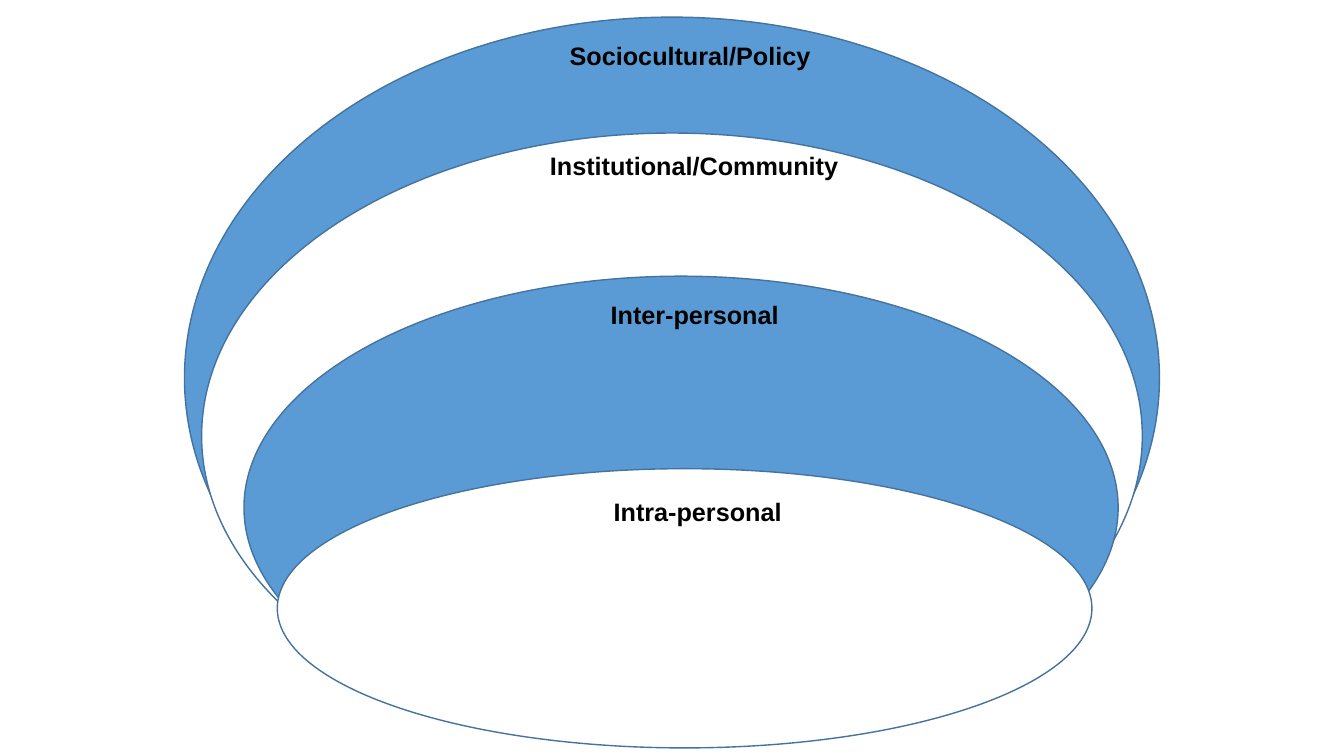
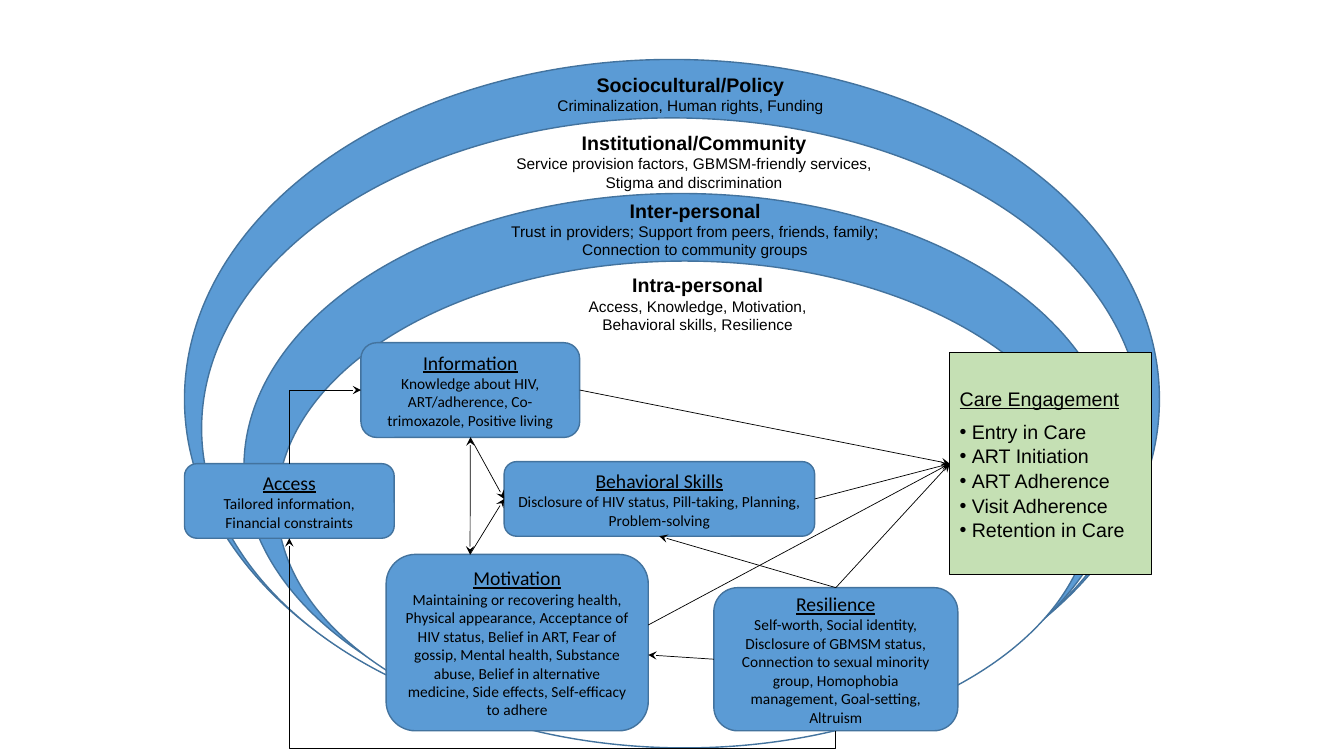
from dataclasses import dataclass

from lxml import etree
from pptx import Presentation
from pptx import util as u
from pptx.dml.color import RGBColor
from pptx.enum import shapes, text
from pptx.oxml import ns

BLUE, OUTLINE, GREEN = "5B9BD5", "43739E", "C5E0B4"
BLACK, WHITE = "000000", "FFFFFF"
OVAL_FILLS = (BLUE, WHITE, BLUE, WHITE)
Point = tuple[float, float]


@dataclass(frozen=True)
class Box:
    left: float
    top: float
    width: float
    height: float

    @property
    def lengths(self) -> list:
        return [u.Inches(n) for n in (self.left, self.top, self.width, self.height)]

    def at(self, across: float, down: float) -> Point:
        """Point at the given fractions of the width and height."""
        return self.left + across * self.width, self.top + down * self.height

    @property
    def west(self) -> Point:
        return self.at(0, 0.5)

    @property
    def east(self) -> Point:
        return self.at(1, 0.5)

    @property
    def north(self) -> Point:
        return self.at(0.5, 0)

    @property
    def south(self) -> Point:
        return self.at(0.5, 1)


@dataclass(frozen=True)
class Label:
    box: Box
    title: str
    details: tuple[str, ...] = ()


@dataclass(frozen=True)
class Arrow:
    start: Point
    end: Point
    both_ends: bool = False


LEVELS_OVALS = (
    Box(1.83, 0.17, 9.67, 7.16),
    Box(2, 1.32, 9.33, 6.01),
    Box(2.42, 2.74, 8.67, 4.59),
    Box(2.75, 4.65, 8.08, 2.77),
)
LEVELS_LABELS = (
    Label(Box(5.54, 0.35, 2.61, 0.4), "Sociocultural/Policy"),
    Label(Box(5.34, 1.44, 3.09, 0.4), "Institutional/Community"),
    Label(Box(5.95, 2.92, 1.88, 0.4), "Inter-personal"),
    Label(Box(5.98, 4.87, 1.88, 0.4), "Intra-personal"),
)
MODEL_OVALS = (
    Box(1.83, 0.59, 9.67, 6.74),
    Box(2, 1.17, 9.33, 6.16),
    Box(2.42, 1.92, 8.67, 5.42),
    Box(2.75, 2.59, 8.08, 4.83),
)
MODEL_LABELS = (
    Label(Box(5.4, 0.67, 2.9, 0.52), "Sociocultural/Policy",
          ("Criminalization, Human rights, Funding",)),
    Label(Box(4.99, 1.25, 3.79, 0.71), "Institutional/Community",
          ("Service provision factors, GBMSM-friendly services,",
           "Stigma and discrimination")),
    Label(Box(4.95, 1.92, 3.89, 0.71), "Inter-personal",
          ("Trust in providers; Support from peers, friends, family;",
           "Connection to community groups")),
    Label(Box(5.71, 2.66, 2.42, 0.71), "Intra-personal",
          ("Access, Knowledge, Motivation,", "Behavioral skills, Resilience")),
)
CARE = Label(Box(9.42, 3.5, 2, 2.2), "Care Engagement",
             ("Entry in Care", "ART Initiation", "ART Adherence",
              "Visit Adherence", "Retention in Care"))
SKILLS = Label(Box(5, 4.58, 3.08, 0.74), "Behavioral Skills",
               ("Disclosure of HIV status, Pill-taking, Planning, Problem-solving",))
INFORMATION = Label(Box(3.58, 3.4, 2.17, 0.94), "Information",
                    ("Knowledge about HIV, ART/adherence, Co-trimoxazole, "
                     "Positive living",))
MOTIVATION = Label(Box(3.83, 5.5, 2.6, 1.75), "Motivation",
                   ("Maintaining or recovering health, Physical appearance, "
                    "Acceptance of HIV status, Belief in ART, Fear of gossip, "
                    "Mental health, Substance abuse, Belief in alternative medicine, "
                    "Side effects, Self-efficacy to adhere",))
ACCESS = Label(Box(1.83, 4.6, 2.08, 0.74), "Access",
               ("Tailored information, Financial constraints",))
RESILIENCE = Label(Box(7.08, 5.83, 2.42, 1.42), "Resilience",
                   ("Self-worth, Social identity, Disclosure of GBMSM status, "
                    "Connection to sexual minority group, Homophobia management, "
                    "Goal-setting, Altruism",))
FACTORS = (SKILLS, INFORMATION, MOTIVATION, ACCESS, RESILIENCE)

CARE_ENTRY = CARE.box.west
ARROWS = (
    Arrow(INFORMATION.box.south, SKILLS.box.west),
    Arrow(MOTIVATION.box.at(0.32, 0), SKILLS.box.west),
    Arrow(INFORMATION.box.south, MOTIVATION.box.at(0.32, 0), both_ends=True),
    Arrow(INFORMATION.box.east, CARE_ENTRY),
    Arrow(MOTIVATION.box.at(1, 0.4), CARE_ENTRY),
    Arrow(SKILLS.box.east, CARE_ENTRY),
    Arrow(RESILIENCE.box.north, CARE_ENTRY),
    Arrow(RESILIENCE.box.north, SKILLS.box.south),
    Arrow(RESILIENCE.box.west, MOTIVATION.box.at(1, 0.57)),
)


def colour(value: str) -> RGBColor:
    return RGBColor.from_string(value)


def add_shape(slide, kind, box: Box, fill: str, line: str = OUTLINE, width: float = 1):
    shape = slide.shapes.add_shape(kind, *box.lengths)
    shape.shadow.inherit = False
    shape.fill.solid()
    shape.fill.fore_color.rgb = colour(fill)
    shape.line.color.rgb = colour(line)
    shape.line.width = u.Pt(width)
    return shape


def write(frame, label: Label, font: str, title_size: float, detail_size: float,
          bold: bool = False, underline: bool = False,
          align=text.PP_ALIGN.CENTER) -> None:
    """Put the title and the details in the frame, one paragraph each."""
    frame.text = "\n".join((label.title, *label.details))
    for index, paragraph in enumerate(frame.paragraphs):
        is_title = index == 0
        paragraph.alignment = align
        for run in paragraph.runs:
            run.font.name = font
            run.font.size = u.Pt(title_size if is_title else detail_size)
            run.font.bold = bold and is_title
            run.font.underline = underline and is_title
            run.font.color.rgb = colour(BLACK)


def add_levels(slide, ovals: tuple[Box, ...], labels: tuple[Label, ...],
               title_size: float) -> None:
    """Draw the nested ovals and the name of each level."""
    for box, fill in zip(ovals, OVAL_FILLS):
        add_shape(slide, shapes.MSO_SHAPE.OVAL, box, fill)
    for label in labels:
        frame = slide.shapes.add_textbox(*label.box.lengths).text_frame
        frame.word_wrap = False
        write(frame, label, "Arial", title_size, 11, bold=True)


def add_factor(slide, label: Label) -> None:
    shape = add_shape(slide, shapes.MSO_SHAPE.ROUNDED_RECTANGLE, label.box, BLUE)
    frame = shape.text_frame
    frame.word_wrap = True
    frame.vertical_anchor = text.MSO_ANCHOR.MIDDLE
    write(frame, label, "Calibri", 14, 11, underline=True)


def add_care(slide) -> None:
    shape = add_shape(slide, shapes.MSO_SHAPE.RECTANGLE, CARE.box, GREEN, BLACK, 0.75)
    frame = shape.text_frame
    frame.word_wrap = True
    frame.vertical_anchor = text.MSO_ANCHOR.MIDDLE
    write(frame, CARE, "Arial", 14, 14, underline=True, align=text.PP_ALIGN.LEFT)
    title, *items = frame.paragraphs
    title.space_after = u.Pt(6)
    for paragraph in frame.paragraphs:
        paragraph.line_spacing = 1.05
    indent = u.Inches(0.12)
    for paragraph in items:
        properties = paragraph._p.get_or_add_pPr()
        properties.set("marL", str(indent))
        properties.set("indent", str(-indent))
        etree.SubElement(properties, ns.qn("a:buFont"), typeface="Arial")
        etree.SubElement(properties, ns.qn("a:buChar"), char="•")


def add_arrow(slide, arrow: Arrow, kind=shapes.MSO_CONNECTOR.STRAIGHT):
    points = [u.Inches(n) for n in (*arrow.start, *arrow.end)]
    connector = slide.shapes.add_connector(kind, *points)
    connector.line.color.rgb = colour(BLACK)
    connector.line.width = u.Pt(0.5)
    line = connector.line._get_or_add_ln()
    if arrow.both_ends:
        etree.SubElement(line, ns.qn("a:headEnd"), type="stealth")
    etree.SubElement(line, ns.qn("a:tailEnd"), type="stealth")
    etree.SubElement(connector._element.spPr, ns.qn("a:effectLst"))
    return connector


def add_elbow(slide, arrow: Arrow, preset: str, bend: int | None = None) -> None:
    """Draw an elbow arrow that leaves vertically: a preset turned by 90 degrees."""
    (x1, y1), (x2, y2) = arrow.start, arrow.end
    x, y = (x1 + x2) / 2, (y1 + y2) / 2
    unturned = Arrow((x + y1 - y, y - x1 + x), (x + y2 - y, y - x2 + x))
    connector = add_arrow(slide, unturned, shapes.MSO_CONNECTOR.ELBOW)
    properties = connector._element.spPr
    properties.find(ns.qn("a:xfrm")).set("rot", str(90 * 60000))
    geometry = properties.find(ns.qn("a:prstGeom"))
    geometry.set("prst", preset)
    if bend is not None:
        guides = geometry.find(ns.qn("a:avLst"))
        etree.SubElement(guides, ns.qn("a:gd"), name="adj1", fmla=f"val {bend}")


def main() -> None:
    presentation = Presentation()
    presentation.slide_width = u.Inches(13.33)
    presentation.slide_height = u.Inches(7.5)
    blank = presentation.slide_layouts[6]

    add_levels(presentation.slides.add_slide(blank), LEVELS_OVALS, LEVELS_LABELS, 18)

    model = presentation.slides.add_slide(blank)
    add_levels(model, MODEL_OVALS, MODEL_LABELS, 14)
    add_care(model)
    for factor in FACTORS:
        add_factor(model, factor)
    for arrow in ARROWS:
        add_arrow(model, arrow)
    add_elbow(model, Arrow(ACCESS.box.north, INFORMATION.box.west), "bentConnector2")
    add_elbow(model, Arrow(RESILIENCE.box.south, ACCESS.box.south),
              "bentConnector3", bend=-8900)

    presentation.save("out.pptx")


if __name__ == "__main__":
    main()
